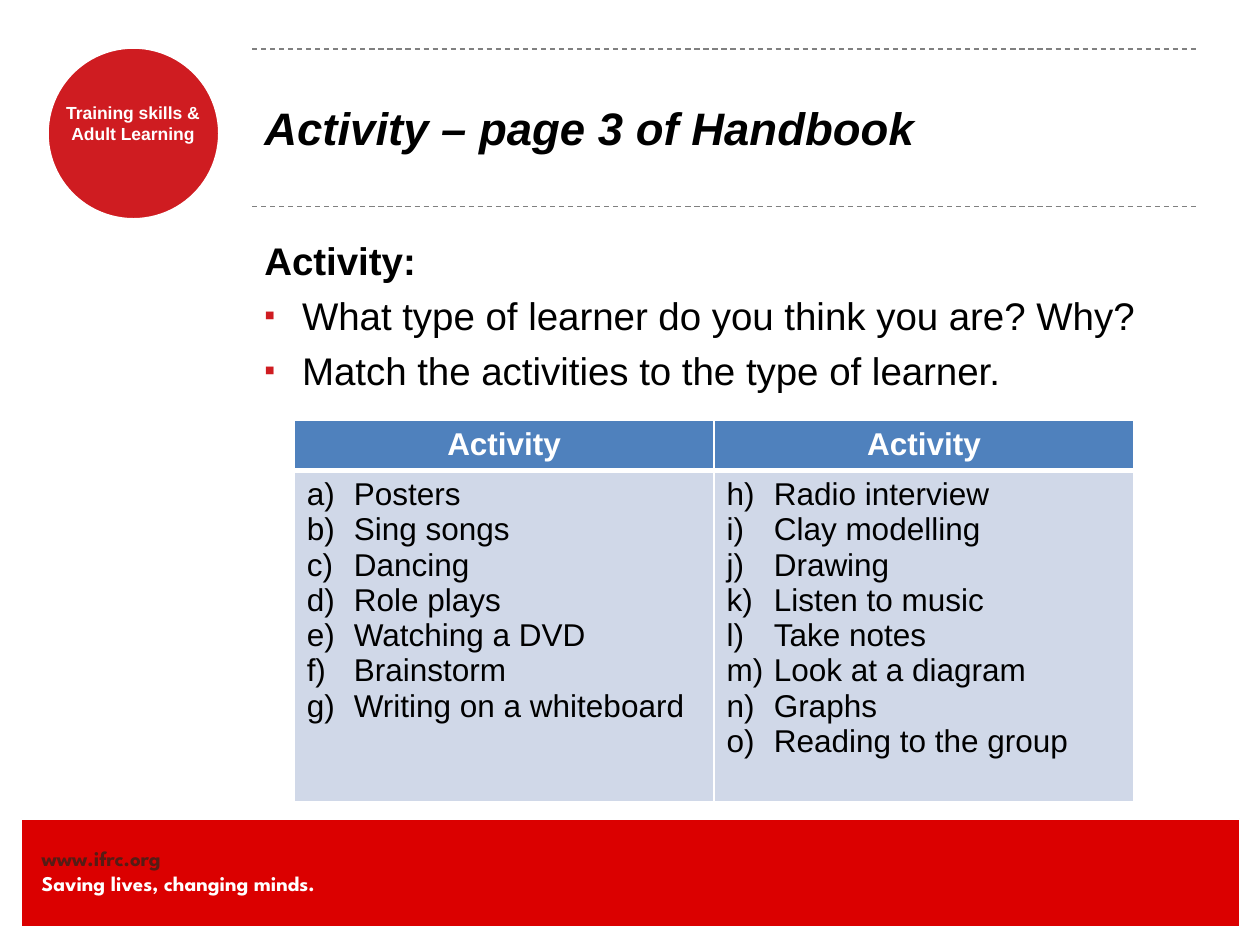
from dataclasses import dataclass

from lxml.etree import SubElement
from pptx import Presentation
from pptx.dml.color import RGBColor
from pptx.enum.dml import MSO_LINE_DASH_STYLE as Dash
from pptx.enum.shapes import MSO_CONNECTOR, MSO_SHAPE
from pptx.enum.text import MSO_ANCHOR as Anchor, PP_ALIGN as Align
from pptx.oxml.ns import qn
from pptx.util import Cm, Pt

BLACK, WHITE, RED = "000000", "FFFFFF", "CF1C21"
CONTENT_LEFT, CONTENT_WIDTH = 5.08, 19.05
INSET = (0.25, 0.13)


@dataclass(frozen=True)
class Area:
    """Position and size in centimetres."""
    left: float
    top: float
    width: float
    height: float

    def lengths(self) -> tuple:
        return Cm(self.left), Cm(self.top), Cm(self.width), Cm(self.height)


@dataclass(frozen=True)
class Style:
    size: float
    color: str = BLACK
    bold: bool = False
    italic: bool = False
    face: str = "Arial"


@dataclass(frozen=True)
class ActivityColumn:
    first_number: int
    activities: tuple


COLUMNS = (
    ActivityColumn(1, ("Posters", "Sing songs", "Dancing", "Role plays",
                       "Watching a DVD", "Brainstorm", "Writing on a whiteboard")),
    ActivityColumn(8, ("Radio interview", "Clay modelling", "Drawing", "Listen to music",
                       "Take notes", "Look at a diagram", "Graphs", "Reading to the group")),
)
QUESTIONS = ("What type of learner do you think you are? Why?",
             "Match the activities to the type of learner.")


def rgb(color: str) -> RGBColor:
    return RGBColor.from_string(color)


def add_run(para, text: str, style: Style) -> None:
    span = para.add_run()
    span.text = text
    font = span.font
    font.name, font.size = style.face, Pt(style.size)
    font.bold, font.italic = style.bold, style.italic
    font.color.rgb = rgb(style.color)


def next_para(frame, index: int):
    """Return the frame's first paragraph for index 0, else a new one."""
    return frame.add_paragraph() if index else frame.paragraphs[0]


def add_box(page, area: Area, inset: tuple = (0, 0), anchor=Anchor.TOP):
    frame = page.shapes.add_textbox(*area.lengths()).text_frame
    frame.word_wrap = True
    frame.vertical_anchor = anchor
    frame.margin_left = frame.margin_right = Cm(inset[0])
    frame.margin_top = frame.margin_bottom = Cm(inset[1])
    return frame


def add_filled(page, kind, area: Area, fill: str, line_width: float) -> None:
    shape = page.shapes.add_shape(kind, *area.lengths())
    shape.shadow.inherit = False
    shape.fill.solid()
    shape.fill.fore_color.rgb = rgb(fill)
    shape.line.color.rgb = rgb(WHITE)
    shape.line.width = Pt(line_width)


def add_rule(page, top: float) -> None:
    """Draw a dashed line across the content width."""
    right = CONTENT_LEFT + CONTENT_WIDTH
    rule = page.shapes.add_connector(MSO_CONNECTOR.STRAIGHT, Cm(CONTENT_LEFT), Cm(top),
                                     Cm(right), Cm(top))
    rule.line.color.rgb = rgb("808080")
    rule.line.width = Pt(0.75)
    rule.line.dash_style = Dash.DASH
    SubElement(rule._element.spPr, qn("a:effectLst"))


def hang(para, indent: float):
    """Set a hanging indent and return the paragraph properties."""
    props = para._p.get_or_add_pPr()
    props.set("marL", str(Cm(indent)))
    props.set("indent", str(-Cm(indent)))
    return props


def add_square_bullet(para) -> None:
    props = hang(para, 0.76)
    SubElement(SubElement(props, qn("a:buClr")), qn("a:srgbClr"), val=RED)
    SubElement(props, qn("a:buSzPct"), val="80000")
    SubElement(props, qn("a:buFont"), typeface="Arial")
    SubElement(props, qn("a:buChar"), char="▪")


def add_letter(para, first_number: int) -> None:
    props = hang(para, 0.95)
    SubElement(props, qn("a:buFont"), typeface="Arial")
    SubElement(props, qn("a:buAutoNum"), type="alphaLcParenR", startAt=str(first_number))


def style_cell(cell, fill: str, bottom_width: float) -> None:
    props = cell._tc.get_or_add_tcPr()
    for side, width in (("L", 1), ("R", 1), ("T", 1), ("B", bottom_width)):
        border = SubElement(props, qn(f"a:ln{side}"), w=str(Pt(width)))
        SubElement(SubElement(border, qn("a:solidFill")), qn("a:srgbClr"), val=WHITE)
    cell.fill.solid()
    cell.fill.fore_color.rgb = rgb(fill)


def add_activity_table(page, area: Area, header_height: float) -> None:
    table = page.shapes.add_table(2, len(COLUMNS), *area.lengths()).table
    table.rows[0].height = Cm(header_height)
    table.rows[1].height = Cm(area.height - header_height)
    for index, column in enumerate(COLUMNS):
        table.columns[index].width = Cm(area.width / len(COLUMNS))
        header, body = table.cell(0, index), table.cell(1, index)
        style_cell(header, "4F81BD", 3)
        style_cell(body, "D0D8E8", 1)
        title = header.text_frame.paragraphs[0]
        title.alignment = Align.CENTER
        add_run(title, "Activity", Style(18, WHITE, bold=True))
        for row, activity in enumerate(column.activities):
            para = next_para(body.text_frame, row)
            add_letter(para, column.first_number)
            add_run(para, activity, Style(18))


def add_footer(page) -> None:
    add_filled(page, MSO_SHAPE.RECTANGLE, Area(0.43, 16.51, 24.56, 2.18), "DB0000", 0.75)
    frame = add_box(page, Area(0.84, 17.04, 8.69, 1.02))
    lines = (("www.ifrc.org", "551C15"), ("Saving lives, changing minds.", WHITE))
    for index, (text, color) in enumerate(lines):
        add_run(next_para(frame, index), text,
                Style(12, color, bold=True, face="League Spartan"))


def add_badge(page) -> None:
    add_filled(page, MSO_SHAPE.OVAL, Area(0.94, 0.94, 3.5, 3.5), RED, 2.5)
    para = add_box(page, Area(1.09, 2.06, 3.18, 0.86)).paragraphs[0]
    para.alignment = Align.CENTER
    add_run(para, "Training skills & Adult Learning", Style(10, WHITE, bold=True))


def add_heading(page) -> None:
    for top in (0.99, 4.16):
        add_rule(page, top)
    frame = add_box(page, Area(CONTENT_LEFT, 0.97, CONTENT_WIDTH, 3.18), INSET, Anchor.MIDDLE)
    add_run(frame.paragraphs[0], "Activity – page 3 of Handbook",
            Style(26, bold=True, italic=True))


def add_questions(page) -> None:
    frame = add_box(page, Area(CONTENT_LEFT, 4.65, CONTENT_WIDTH, 11.63), INSET)
    add_run(frame.paragraphs[0], "Activity:", Style(22, bold=True))
    for question in QUESTIONS:
        para = frame.add_paragraph()
        para.space_before = Pt(5)
        add_square_bullet(para)
        add_run(para, question, Style(22))


def main() -> None:
    deck = Presentation()
    deck.slide_width, deck.slide_height = Cm(25.4), Cm(19.05)
    page = deck.slides.add_slide(deck.slide_layouts[6])
    add_footer(page)
    add_badge(page)
    add_heading(page)
    add_questions(page)
    add_activity_table(page, Area(5.93, 8.47, 16.93, 7.64), 0.96)
    deck.save("out.pptx")


if __name__ == "__main__":
    main()
